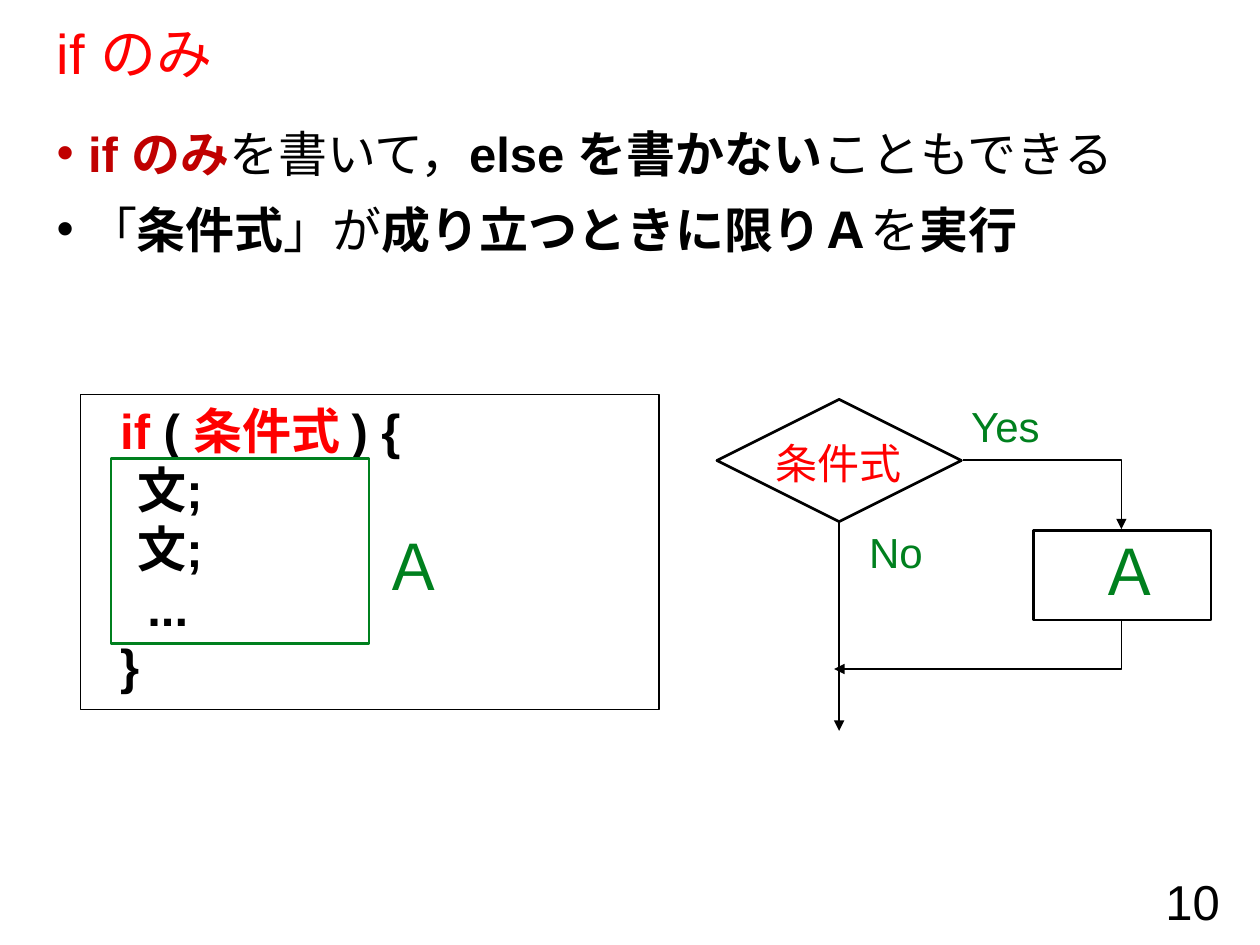
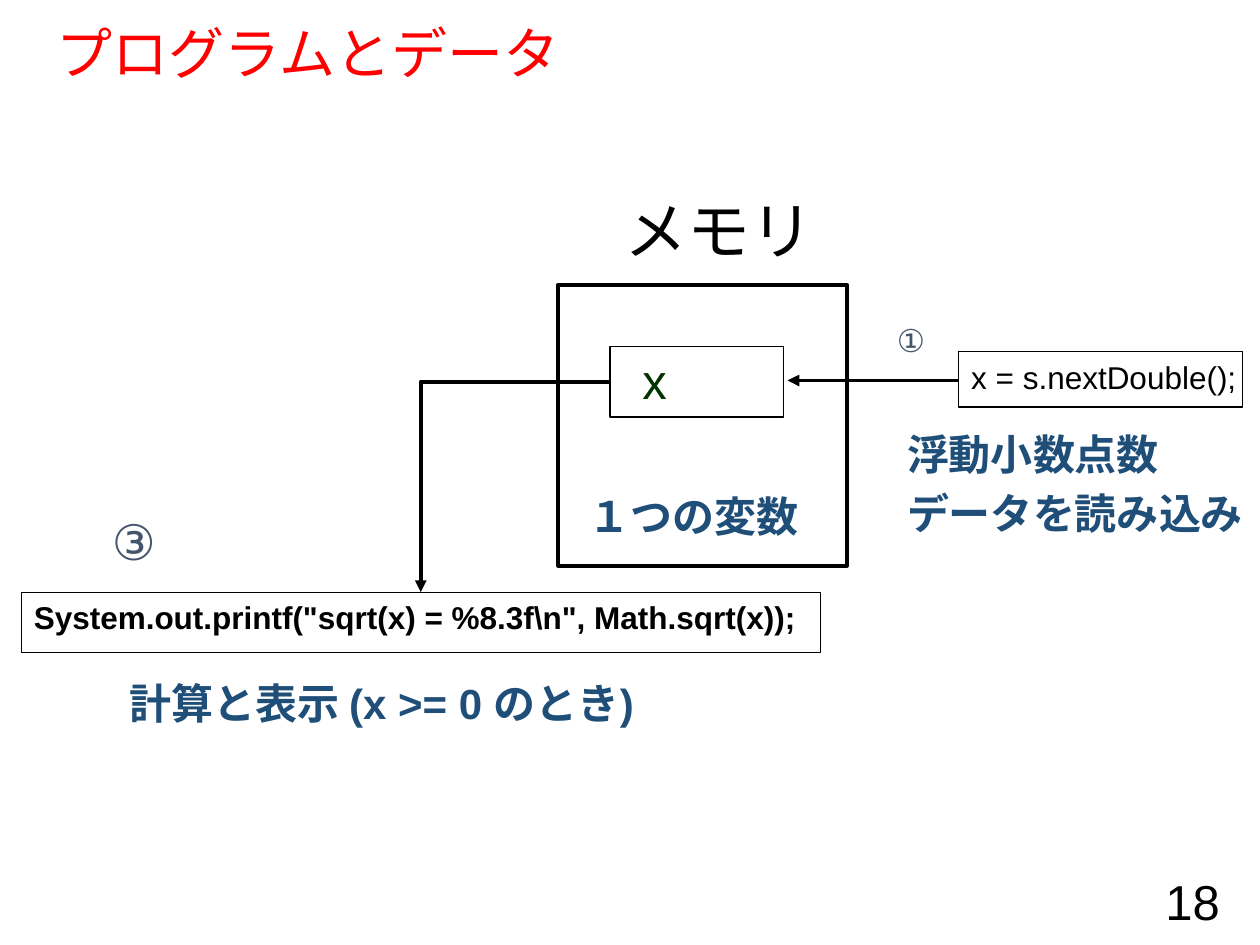
"""Build two Java lesson slides: a lone if statement, and program and data."""
import pptx
import pptx.dml.color
import pptx.enum.dml
import pptx.enum.lang
import pptx.enum.shapes
import pptx.enum.text
import pptx.oxml
import pptx.oxml.ns
import pptx.util

PX = 9144
FONT = "Arial"
COLORS = {
    "black": "000000",
    "red": "FF0000",
    "dark_red": "C00000",
    "green": "00801E",
    "dark_green": "003300",
    "navy": "1F4E79",
    "slate": "44546A",
}
SHAPES = pptx.enum.shapes.MSO_SHAPE
ALIGN = pptx.enum.text.PP_ALIGN
ANCHOR = pptx.enum.text.MSO_ANCHOR


def emu(*lengths):
    """Turn px lengths into EMU."""
    return [pptx.util.Emu(length * PX) for length in lengths]


def rgb(name):
    """Look up a named colour."""
    return pptx.dml.color.RGBColor.from_string(COLORS[name])


def add_child(parent, tag, **attributes):
    """Append a drawing element with the given attributes."""
    child = pptx.oxml.parse_xml(f"<a:{tag} {pptx.oxml.ns.nsdecls('a')}/>")
    for name, value in attributes.items():
        child.set(name, value)
    parent.append(child)


def add_bullet(paragraph):
    """Give a paragraph a hanging round bullet."""
    properties = paragraph._p.get_or_add_pPr()
    properties.set("marL", str(25 * PX))
    properties.set("indent", str(-25 * PX))
    add_child(properties, "buFont", typeface=FONT)
    add_child(properties, "buChar", char="•")


def write(text_frame, paragraphs, size, color="black", bold=False, align=ALIGN.LEFT,
          anchor=ANCHOR.TOP, wrap=False, space=0, line_spacing=None, bullets=False):
    """Fill a text frame; a paragraph is a string or a list of (text, colour, bold)."""
    text_frame.word_wrap = wrap
    text_frame.auto_size = pptx.enum.text.MSO_AUTO_SIZE.NONE
    text_frame.vertical_anchor = anchor
    for index, content in enumerate(paragraphs):
        paragraph = text_frame.add_paragraph() if index else text_frame.paragraphs[0]
        paragraph.alignment = align
        paragraph.space_before = pptx.util.Pt(space if index else 0)
        if line_spacing:
            paragraph.line_spacing = line_spacing
        if bullets:
            add_bullet(paragraph)
        runs = [(content, color, bold)] if isinstance(content, str) else content
        for text, run_color, run_bold in runs:
            run = paragraph.add_run()
            run.text = text
            run.font.name = FONT
            run.font.size = pptx.util.Pt(size)
            run.font.bold = run_bold
            run.font.color.rgb = rgb(run_color)
            run.font.language_id = pptx.enum.lang.MSO_LANGUAGE_ID.JAPANESE


def add_text(slide, bounds, paragraphs, size, **style):
    """Add a text box."""
    write(slide.shapes.add_textbox(*emu(*bounds)).text_frame, paragraphs, size, **style)


def add_outline(slide, bounds, width, kind=SHAPES.RECTANGLE, color="black"):
    """Add an unfilled outlined shape."""
    shape = slide.shapes.add_shape(kind, *emu(*bounds))
    shape.shadow.inherit = False
    shape.fill.background()
    shape.line.color.rgb = rgb(color)
    shape.line.width = pptx.util.Pt(width)
    return shape


def add_arrow(slide, begin, end, width, elbow=False, arrow_at="tailEnd"):
    """Add a straight arrow, or one that runs across and then turns once."""
    kinds = pptx.enum.shapes.MSO_CONNECTOR
    kind = kinds.ELBOW if elbow else kinds.STRAIGHT
    connector = slide.shapes.add_connector(kind, *emu(*begin, *end))
    connector.line.color.rgb = rgb("black")
    connector.line.width = pptx.util.Pt(width)
    properties = connector._element.spPr
    if elbow:
        properties.find(pptx.oxml.ns.qn("a:prstGeom")).set("prst", "bentConnector2")
    add_child(connector.line._get_or_add_ln(), arrow_at, type="triangle")
    add_child(properties, "effectLst")


def add_slide(presentation, title, number):
    """Add a slide with its title and page number."""
    slide = presentation.slides.add_slide(presentation.slide_layouts[5])
    heading = slide.shapes.title
    heading.left, heading.top, heading.width, heading.height = emu(35, 19, 925, 51)
    write(heading.text_frame, [title], 32, color="red", anchor=ANCHOR.MIDDLE,
          wrap=True, line_spacing=0.9)
    add_text(slide, (753, 695, 225, 40), [str(number)], 28, align=ALIGN.RIGHT,
             anchor=ANCHOR.MIDDLE, wrap=True)
    return slide


def add_flowchart(slide):
    """Draw the branch that runs A only when the condition holds."""
    add_outline(slide, (569, 317, 194, 97), 1.5, SHAPES.FLOWCHART_DECISION)
    add_outline(slide, (820, 421, 141, 71), 1.5, SHAPES.FLOWCHART_PROCESS)
    add_arrow(slide, (666, 414), (666, 580), 0.75)
    add_arrow(slide, (764, 365), (890, 420), 0.75, elbow=True)
    add_arrow(slide, (662, 531), (890, 493), 0.75, elbow=True, arrow_at="headEnd")
    add_text(slide, (761, 313, 80, 40), ["Yes"], 24, color="green")
    add_text(slide, (680, 413, 70, 40), ["No"], 24, color="green")
    add_text(slide, (862, 418, 71, 71), ["Ａ"], 36, color="green")
    add_text(slide, (588, 342, 155, 63), ["条件式"], 24, color="red",
             align=ALIGN.CENTER, wrap=True)


def build_if_only(presentation):
    """Build the slide on if without else."""
    slide = add_slide(presentation, "if のみ", 10)
    points = [
        [("if のみ", "dark_red", True), ("を書いて，", "black", False),
         ("else を書かない", "black", True), ("こともできる", "black", False)],
        [("「", "black", False), ("条件式", "black", True), ("」が", "black", False),
         ("成り立つときに限りＡ", "black", True), ("を", "black", False),
         ("実行", "black", True)],
    ]
    add_text(slide, (35, 93, 925, 583), points, 28, wrap=True, space=10, bullets=True)
    add_flowchart(slide)
    code = [
        [("  if", "red", True), (" ( ", "black", True), ("条件式 ", "red", True),
         (") {", "black", True)],
        "    文;", "    文;", "    ...", "  }",
    ]
    code_box = add_outline(slide, (64, 313, 459, 250), 0.75)
    write(code_box.text_frame, code, 28, bold=True, wrap=True)
    add_outline(slide, (88, 364, 205, 147), 1.5, color="green")
    add_text(slide, (294, 414, 71, 71), ["Ａ"], 36, color="green")


def build_program_and_data(presentation):
    """Build the slide on how statements use the variable in memory."""
    slide = add_slide(presentation, "プログラムとデータ", 18)
    add_outline(slide, (443, 226, 229, 223), 2.25)
    add_text(slide, (486, 147, 172, 71), ["メモリ"], 36)
    add_text(slide, (457, 384, 216, 57), ["１つの変数"], 24, color="navy", bold=True)
    read_box = add_outline(slide, (761, 279, 225, 44), 0.75)
    write(read_box.text_frame, ["x = s.nextDouble();"], 18)
    add_outline(slide, (484, 275, 138, 56), 0.75)
    add_text(slide, (500, 273, 40, 57), ["x"], 28, color="dark_green")
    add_arrow(slide, (761, 302), (625, 302), 2.25)
    add_text(slide, (702, 250, 45, 40), ["①"], 18, color="slate")
    add_text(slide, (710, 335, 288, 77), ["浮動小数点数", "データを読み込み"], 24,
             color="navy", bold=True, space=4.8)
    print_box = add_outline(slide, (17, 470, 634, 48), 0.75)
    write(print_box.text_frame,
          ['System.out.printf("sqrt(x) = %8.3f\\n", Math.sqrt(x));'], 18, bold=True)
    add_arrow(slide, (484, 303), (334, 470), 2.25, elbow=True)
    add_text(slide, (79, 401, 59, 57), ["③"], 28, color="slate")
    add_text(slide, (181, 539, 244, 58), ["計算と表示 (x >= 0 のとき)"], 24,
             color="navy", bold=True, align=ALIGN.CENTER, line_spacing=0.85)


def main():
    """Build and save the presentation."""
    presentation = pptx.Presentation()
    presentation.slide_width, presentation.slide_height = emu(1000, 750)
    build_if_only(presentation)
    build_program_and_data(presentation)
    presentation.save("out.pptx")


if __name__ == "__main__":
    main()
